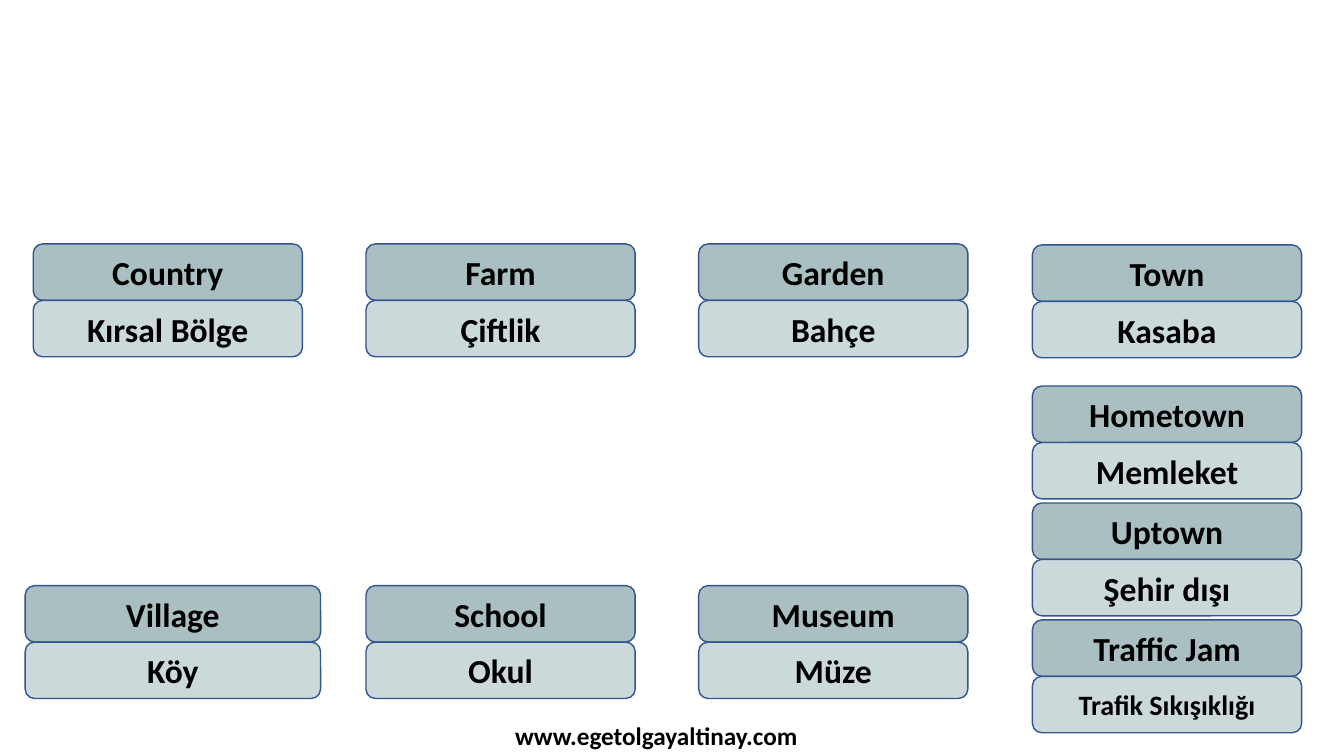
from dataclasses import dataclass

from pptx import Presentation
from pptx import util as u
from pptx.dml import color
from pptx.enum import shapes, text

PX = 9144
HIGH = 56
COLS = 33, 363, 693, 1024
TOP, LOW = 242, 581
STACK, STEP = 383, 116
DARK, PALE, EDGE, INK = "AABFC2", "CCD9DA", "325491", "000000"


@dataclass
class Card:
    left: int
    top: int
    word: str
    gloss: str
    width: int = 267
    size: int = 24


CARDS = [
    Card(COLS[0], TOP, "Country", "Kırsal Bölge"),
    Card(COLS[1], TOP, "Farm", "Çiftlik"),
    Card(COLS[2], TOP, "Garden", "Bahçe"),
    Card(COLS[3], TOP + 1, "Town", "Kasaba"),
    Card(25, LOW, "Village", "Köy", width=293),
    Card(COLS[1], LOW, "School", "Okul"),
    Card(COLS[2], LOW, "Museum", "Müze"),
    Card(COLS[3], STACK, "Hometown", "Memleket"),
    Card(COLS[3], STACK + STEP, "Uptown", "Şehir dışı"),
    Card(COLS[3], STACK + 2 * STEP, "Traffic Jam", "Trafik Sıkışıklığı", size=20),
]


def px(*sizes: int) -> list[u.Emu]:
    return [u.Emu(size * PX) for size in sizes]


def tint(hue: str) -> color.RGBColor:
    return color.RGBColor.from_string(hue)


def write(shape, words: str, size: int) -> None:
    frame = shape.text_frame
    frame.word_wrap = True
    para = frame.paragraphs[0]
    para.alignment = text.PP_ALIGN.CENTER
    run = para.add_run()
    run.text = words
    style = {"name": "Calibri", "size": u.Pt(size), "bold": True}
    for key, value in style.items():
        setattr(run.font, key, value)
    run.font.color.rgb = tint(INK)


def label(slide, card: Card, row: int, words: str, fill: str, size: int) -> None:
    place = px(card.left, card.top + row * HIGH, card.width, HIGH)
    shape = slide.shapes.add_shape(shapes.MSO_SHAPE.ROUNDED_RECTANGLE, *place)
    shape.shadow.inherit = False
    shape.fill.solid()
    shape.fill.fore_color.rgb = tint(fill)
    shape.line.color.rgb = tint(EDGE)
    shape.line.width = u.Pt(1)
    shape.text_frame.vertical_anchor = text.MSO_ANCHOR.MIDDLE
    write(shape, words, size)


def main() -> None:
    deck = Presentation()
    deck.slide_width, deck.slide_height = px(1333, 750)
    slide = deck.slides.add_slide(deck.slide_layouts[6])
    for card in CARDS:
        label(slide, card, 0, card.word, DARK, 24)
        label(slide, card, 1, card.gloss, PALE, card.size)
    site = slide.shapes.add_textbox(*px(376, 710, 550, 40))
    write(site, "www.egetolgayaltinay.com", 18)
    site.text_frame.auto_size = text.MSO_AUTO_SIZE.SHAPE_TO_FIT_TEXT
    deck.save("out.pptx")


if __name__ == "__main__":
    main()
